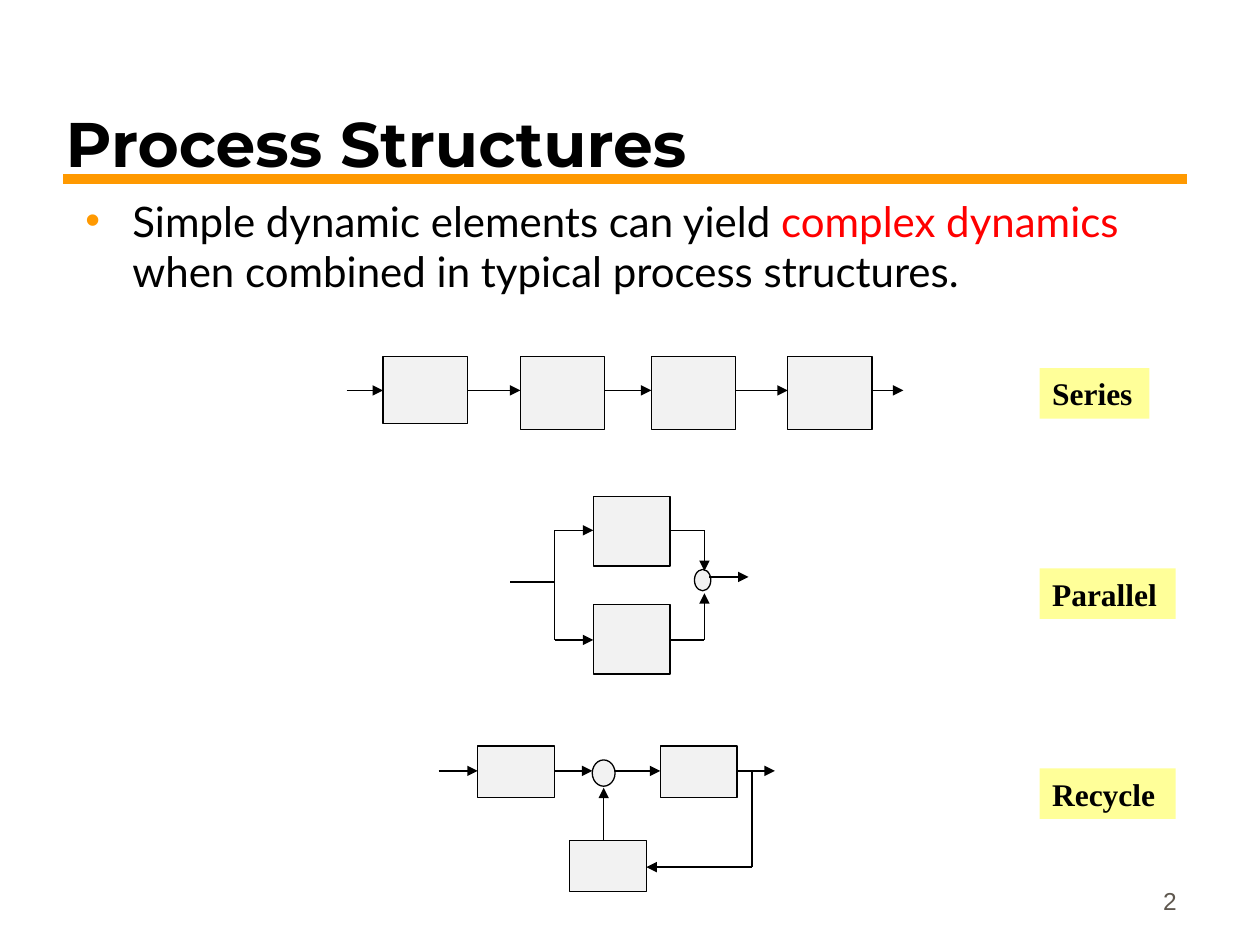
from lxml.etree import SubElement
from pptx import Presentation
from pptx.dml.color import RGBColor
from pptx.enum.shapes import MSO_CONNECTOR, MSO_SHAPE
from pptx.enum.text import MSO_ANCHOR, PP_ALIGN
from pptx.oxml.ns import qn
from pptx.util import Cm, Pt

BLACK = RGBColor(0x00, 0x00, 0x00)
RED = RGBColor(0xFF, 0x00, 0x00)
ORANGE = RGBColor(0xFF, 0x99, 0x00)
YELLOW = RGBColor(0xFF, 0xFF, 0x99)
PALE_GREY = RGBColor(0xF2, 0xF2, 0xF2)
WARM_GREY = RGBColor(0x5E, 0x57, 0x4E)


def write_text(frame, text, font, size, color=BLACK, bold=False,
               align=PP_ALIGN.LEFT, anchor=MSO_ANCHOR.MIDDLE):
    frame.word_wrap = True
    frame.vertical_anchor = anchor
    paragraph = frame.paragraphs[0]
    paragraph.alignment = align
    run = paragraph.add_run()
    run.text = text
    run.font.name = font
    run.font.size = Pt(size)
    run.font.bold = bold
    run.font.color.rgb = color


def draw_line(x1, y1, x2, y2, arrow=True, color=BLACK, width=0.75):
    line = slide.shapes.add_connector(
        MSO_CONNECTOR.STRAIGHT, Cm(x1), Cm(y1), Cm(x2), Cm(y2))
    line.line.color.rgb = color
    line.line.width = Pt(width)
    if arrow:
        SubElement(line.line._get_or_add_ln(), qn("a:tailEnd"), type="triangle")
    SubElement(line._element.spPr, qn("a:effectLst"))


prs = Presentation()
prs.slide_width, prs.slide_height = Cm(25.4), Cm(19.05)
slide = prs.slides.add_slide(prs.slide_layouts[5])

title = slide.shapes.title
title.left, title.top, title.width, title.height = Cm(1.07), Cm(1.91), Cm(22.78), Cm(1.91)
write_text(title.text_frame, "Process Structures", "Montserrat", 36, bold=True)
draw_line(1.27, 3.61, 23.93, 3.61, arrow=False, color=ORANGE, width=6)

statement = slide.shapes.add_textbox(Cm(1.47), Cm(3.81), Cm(22.23), Cm(2.31)).text_frame
for words, color in [("Simple dynamic elements can yield ", BLACK),
                     ("complex dynamics ", RED),
                     ("when combined in typical process structures.", BLACK)]:
    write_text(statement, words, "Lato", 24, color=color, anchor=MSO_ANCHOR.TOP)
bullet = statement.paragraphs[0]._p.get_or_add_pPr()
bullet.set("marL", str(Cm(0.95)))
bullet.set("indent", str(Cm(-0.95)))
SubElement(SubElement(bullet, qn("a:buClr")), qn("a:srgbClr"), val=str(ORANGE))
SubElement(bullet, qn("a:buFont"), typeface="Arial")
SubElement(bullet, qn("a:buChar"), char="•")

series_lefts = [7.72, 10.49, 13.13, 15.88]
series_width = 1.7
series_blocks = [(MSO_SHAPE.RECTANGLE, left, 7.19, series_width, height)
                 for left, height in zip(series_lefts, [1.35, 1.47, 1.47, 1.47])]
parallel_blocks = [(MSO_SHAPE.RECTANGLE, 11.96, top, 1.55, 1.4) for top in (10.01, 12.19)]
recycle_blocks = [(MSO_SHAPE.RECTANGLE, left, top, 1.55, 1.04)
                  for left, top in [(9.63, 15.04), (13.31, 15.04), (11.48, 16.94)]]
junctions = [(MSO_SHAPE.OVAL, 14, 11.48, 0.33, 0.43),
             (MSO_SHAPE.OVAL, 11.94, 15.32, 0.46, 0.53)]

for kind, left, top, width, height in (
        series_blocks + parallel_blocks + recycle_blocks + junctions):
    block = slide.shapes.add_shape(kind, Cm(left), Cm(top), Cm(width), Cm(height))
    block.shadow.inherit = False
    block.fill.solid()
    block.fill.fore_color.rgb = PALE_GREY
    block.line.color.rgb = BLACK
    block.line.width = Pt(0.75)

series_starts = [6.99] + [left + series_width for left in series_lefts]
for start, end in zip(series_starts, series_lefts + [18.21]):
    draw_line(start, 7.87, end, 7.87)

draw_line(10.29, 11.73, 11.18, 11.73, arrow=False)
draw_line(11.18, 10.69, 11.18, 12.9, arrow=False)
for branch, junction_edge in [(10.69, 11.51), (12.9, 11.96)]:
    draw_line(11.18, branch, 11.96, branch)
    draw_line(13.51, branch, 14.2, branch, arrow=False)
    draw_line(14.2, branch, 14.2, junction_edge)
draw_line(14.3, 11.63, 15.09, 11.63)

for start, end in [(8.84, 9.63), (11.18, 11.94), (12.4, 13.31), (14.86, 15.62)]:
    draw_line(start, 15.54, end, 15.54)
draw_line(15.16, 15.54, 15.16, 17.48, arrow=False)
draw_line(15.16, 17.48, 13.03, 17.48)
draw_line(12.17, 16.94, 12.17, 15.88)

for name, top, width in [("Series", 7.42, 2.21), ("Parallel", 11.46, 2.74),
                         ("Recycle", 15.49, 2.74)]:
    label = slide.shapes.add_shape(
        MSO_SHAPE.RECTANGLE, Cm(20.96), Cm(top), Cm(width), Cm(1.02))
    label.shadow.inherit = False
    label.fill.solid()
    label.fill.fore_color.rgb = YELLOW
    label.line.fill.background()
    write_text(label.text_frame, name, "Times New Roman", 18, bold=True)

page_number = slide.shapes.add_textbox(Cm(18.69), Cm(17.3), Cm(5.28), Cm(1.27))
write_text(page_number.text_frame, "2", "Arial", 14, color=WARM_GREY,
           align=PP_ALIGN.RIGHT, anchor=MSO_ANCHOR.BOTTOM)

prs.save("out.pptx")
